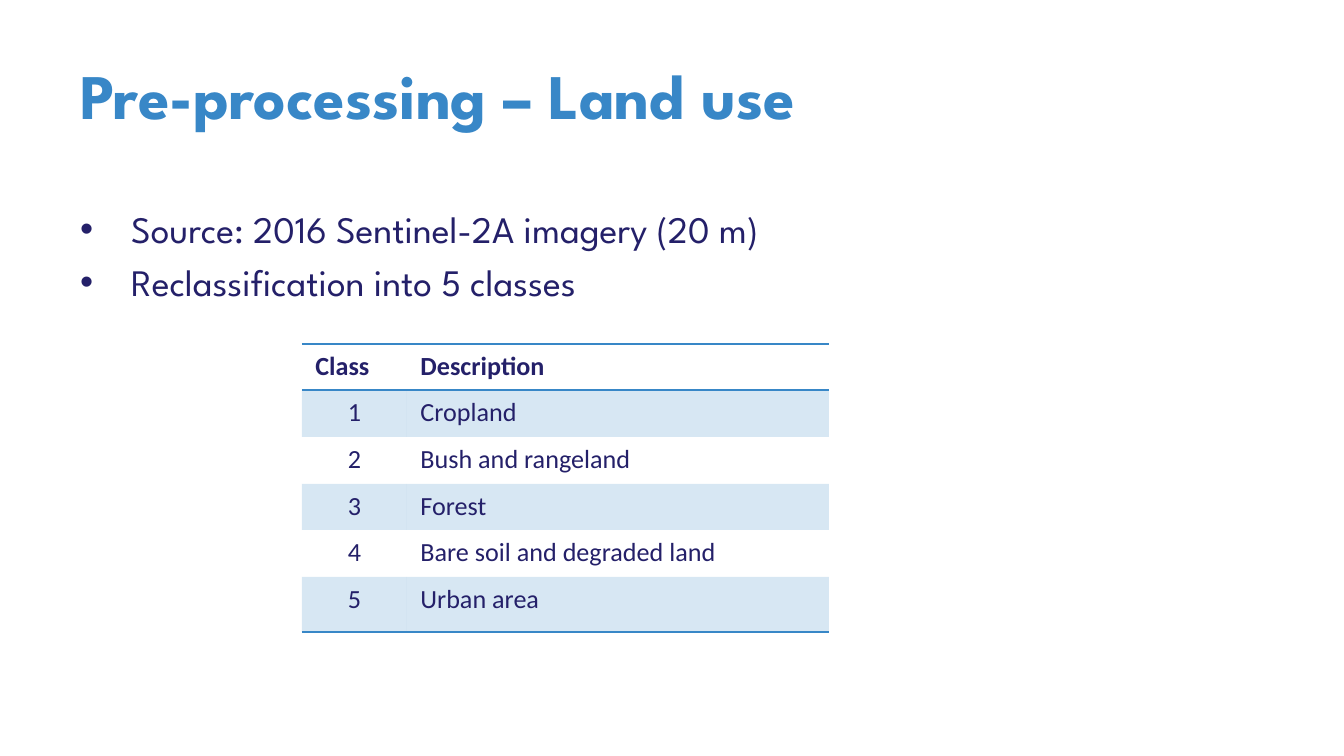
from lxml import etree
from pptx import Presentation
from pptx.dml.color import RGBColor
from pptx.enum.text import MSO_ANCHOR, PP_ALIGN
from pptx.oxml.ns import qn
from pptx.util import Pt

BLUE = RGBColor(0x38, 0x87, 0xC7)
NAVY = RGBColor(0x24, 0x20, 0x69)
CENTER, LEFT = PP_ALIGN.CENTER, PP_ALIGN.LEFT
MIDDLE, TOP = MSO_ANCHOR.MIDDLE, MSO_ANCHOR.TOP
NO_GRID = "{2D5ABB26-0587-4C30-8999-92F81FD0307C}"

TITLE = "Pre-processing – Land use"
POINTS = ["Source: 2016 Sentinel-2A imagery (20 m)", "Reclassification into 5 classes"]
HEADS = ("Class", "Description")
CLASSES = ["Cropland", "Bush and rangeland", "Forest",
           "Bare soil and degraded land", "Urban area"]

SIZE = (1344, 756)
TITLE_BOX = (67, 31, 996, 126)
BODY_BOX = (67, 200, 996, 501)
TABLE_AT = (302, 344)
COLS = (105, 422)
ROWS = (46, 47, 47, 46, 47, 55)
INDENT = 51

TITLE_FONT = {"name": "League Spartan", "size": Pt(34), "bold": True}
BODY_FONT = {"name": "League Spartan", "size": Pt(20), "bold": False}
HEAD_FONT = {"name": "Calibri", "size": Pt(14), "bold": True}
CELL_FONT = {**HEAD_FONT, "bold": False}


def px(n):
    return round(n * 914400 / 134.4)


def style(para, font, color):
    for key, value in font.items():
        setattr(para.font, key, value)
    para.font.color.rgb = color


def add_text(slide, box, lines, font, color, anchor, bullet=False):
    frame = slide.shapes.add_textbox(*map(px, box)).text_frame
    frame.word_wrap = True
    frame.vertical_anchor = anchor
    for i, line in enumerate(lines):
        para = frame.paragraphs[0] if i == 0 else frame.add_paragraph()
        para.text = line
        if bullet:
            props = para._p.get_or_add_pPr()
            props.set("marL", str(px(INDENT)))
            props.set("indent", str(-px(INDENT)))
            etree.SubElement(props, qn("a:buFont"), typeface="Arial")
            etree.SubElement(props, qn("a:buChar"), char="•")
            if i:
                para.space_before = Pt(4)
        style(para, font, color)


def tint(cell):
    """Fill a cell with blue at 20% opacity."""
    cell.fill.solid()
    cell.fill.fore_color.rgb = BLUE
    color = cell._tc.tcPr.find(".//" + qn("a:srgbClr"))
    etree.SubElement(color, qn("a:alpha"), val="20000")


def rule(cell, sides):
    """Draw blue 1 pt borders; they must stand before the fill."""
    props = cell._tc.get_or_add_tcPr()
    for i, side in enumerate(sides):
        line = etree.Element(qn("a:ln" + side), w=str(Pt(1)))
        fill = etree.SubElement(line, qn("a:solidFill"))
        etree.SubElement(fill, qn("a:srgbClr"), val=str(BLUE))
        props.insert(i, line)


def add_classes(slide):
    rows = [HEADS] + [(str(n), name) for n, name in enumerate(CLASSES, 1)]
    box = (*TABLE_AT, sum(COLS), sum(ROWS))
    table = slide.shapes.add_table(len(rows), len(COLS), *map(px, box)).table
    table.first_row = table.horz_banding = False
    table._tbl.tblPr.find(qn("a:tableStyleId")).text = NO_GRID
    for col, width in zip(table.columns, COLS):
        col.width = px(width)
    for r, values in enumerate(rows):
        table.rows[r].height = px(ROWS[r])
        for c, value in enumerate(values):
            cell = table.cell(r, c)
            cell.text = value
            para = cell.text_frame.paragraphs[0]
            para.alignment = CENTER if r and c == 0 else LEFT
            style(para, CELL_FONT if r else HEAD_FONT, NAVY)
            if r % 2:
                tint(cell)
            else:
                cell.fill.background()
            if r == 0:
                rule(cell, "TB")
            elif r == len(rows) - 1:
                rule(cell, "B")


def main():
    deck = Presentation()
    deck.slide_width, deck.slide_height = map(px, SIZE)
    slide = deck.slides.add_slide(deck.slide_layouts[6])
    add_text(slide, TITLE_BOX, [TITLE], TITLE_FONT, BLUE, MIDDLE)
    add_text(slide, BODY_BOX, POINTS, BODY_FONT, NAVY, TOP, bullet=True)
    add_classes(slide)
    deck.save("out.pptx")


if __name__ == "__main__":
    main()
